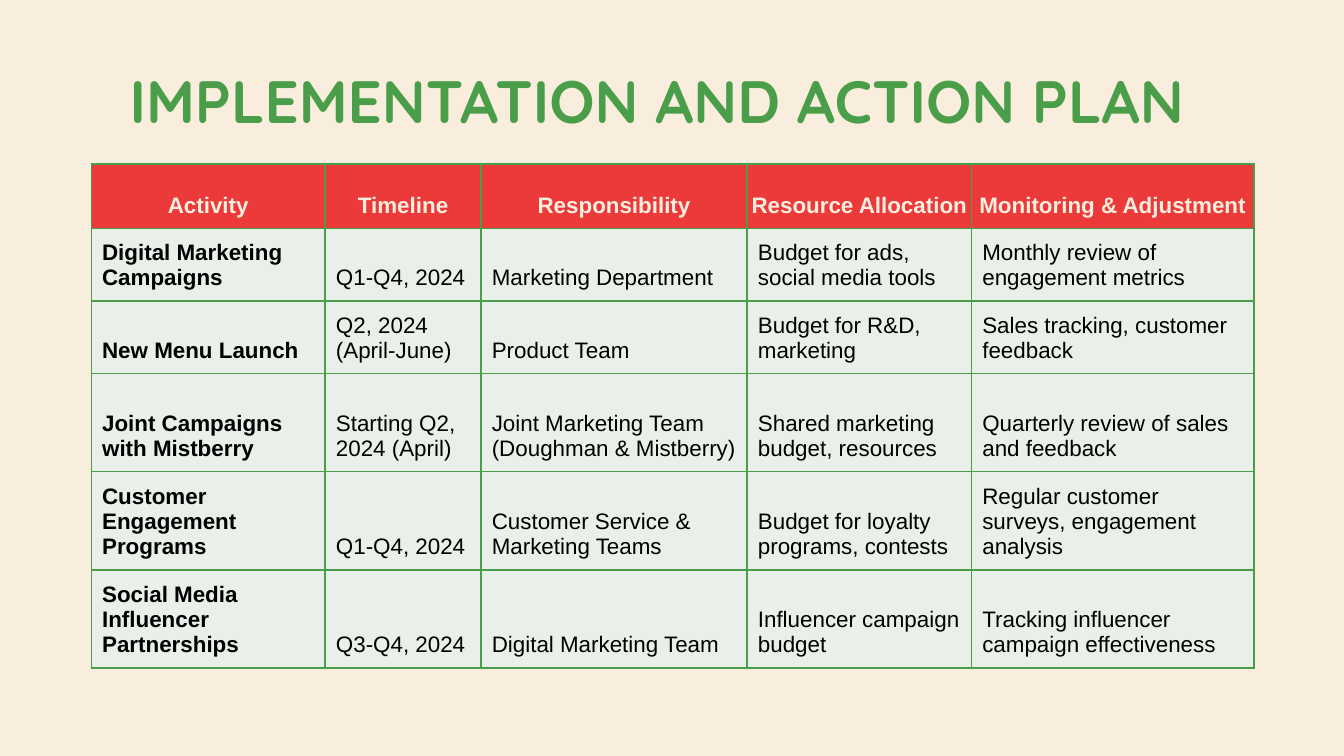
from lxml import etree
from pptx import Presentation
from pptx.dml.color import RGBColor
from pptx.enum.text import MSO_ANCHOR as Anchor, PP_ALIGN as Align
from pptx.oxml.ns import qn
from pptx.util import Inches, Pt

CREAM, GREEN, RED, MINT, BLACK = "F9EDDD", "4A9E4A", "EC3A3B", "E9F0E9", "000000"
SLIDE_WIDTH = 10
COLUMN_WIDTHS = [1.74, 1.16, 1.98, 1.67, 2.1]
ROW_HEIGHTS = [0.48, 0.54, 0.54, 0.73, 0.73, 0.73]
PLAN = [
    ["Activity", "Timeline", "Responsibility", "Resource Allocation",
     "Monitoring & Adjustment"],
    ["Digital Marketing Campaigns", "Q1-Q4, 2024", "Marketing Department",
     "Budget for ads, social media tools", "Monthly review of engagement metrics"],
    ["New Menu Launch", "Q2, 2024 (April-June)", "Product Team",
     "Budget for R&D, marketing", "Sales tracking, customer feedback"],
    ["Joint Campaigns with Mistberry", "Starting Q2, 2024 (April)",
     "Joint Marketing Team (Doughman & Mistberry)",
     "Shared marketing budget, resources", "Quarterly review of sales and feedback"],
    ["Customer Engagement Programs", "Q1-Q4, 2024",
     "Customer Service & Marketing Teams", "Budget for loyalty programs, contests",
     "Regular customer surveys, engagement analysis"],
    ["Social Media Influencer Partnerships", "Q3-Q4, 2024", "Digital Marketing Team",
     "Influencer campaign budget", "Tracking influencer campaign effectiveness"],
]


def rgb(value):
    """Return the colour for a hex string."""
    return RGBColor.from_string(value)


def add_run(p, text, font, size, color, bold):
    """Add one formatted run to a paragraph."""
    r = p.add_run()
    r.text = text
    r.font.name, r.font.size, r.font.bold = font, Pt(size), bold
    r.font.color.rgb = rgb(color)


def set_borders(cell, color, width):
    """Draw a solid line on all four sides of a cell."""
    tc_pr = cell._tc.get_or_add_tcPr()
    for side in ("a:lnL", "a:lnR", "a:lnT", "a:lnB"):
        ln = etree.SubElement(tc_pr, qn(side), w=str(Pt(width)))
        fill = etree.SubElement(ln, qn("a:solidFill"))
        etree.SubElement(fill, qn("a:srgbClr"), val=color)


def place_title(slide, left, top, width, height):
    """Move the title placeholder into its box and fill it."""
    sp = slide.shapes.title
    sp.left, sp.top = Inches(left), Inches(top)
    sp.width, sp.height = Inches(width), Inches(height)
    tf = sp.text_frame
    tf.margin_left = tf.margin_right = tf.margin_top = tf.margin_bottom = 0
    tf.word_wrap, tf.vertical_anchor = True, Anchor.MIDDLE
    p = tf.paragraphs[0]
    p.alignment = Align.CENTER
    add_run(p, "IMPLEMENTATION AND ACTION PLAN", "Quicksand", 32, GREEN, True)


def fill_cell(cell, text, is_header, is_activity):
    """Format one table cell as a header, an activity or a detail."""
    margin = Inches(0.02 if is_header else 0.08)
    cell.margin_left = cell.margin_right = cell.margin_top = margin
    cell.margin_bottom = Inches(0.08)
    cell.vertical_anchor = Anchor.BOTTOM
    set_borders(cell, GREEN, 1)
    cell.fill.solid()
    cell.fill.fore_color.rgb = rgb(RED if is_header else MINT)
    p = cell.text_frame.paragraphs[0]
    p.alignment = Align.CENTER if is_header else Align.LEFT
    add_run(p, text, "Arial", 12, CREAM if is_header else BLACK,
            is_header or is_activity)


def add_plan_table(slide, left, top, width, height):
    """Add the action plan table in the given box."""
    table = slide.shapes.add_table(
        len(PLAN), len(COLUMN_WIDTHS),
        Inches(left), Inches(top), Inches(width), Inches(height)).table
    table.horz_banding = False
    for column, column_width in zip(table.columns, COLUMN_WIDTHS):
        column.width = Inches(column_width)
    for row, row_height in zip(table.rows, ROW_HEIGHTS):
        row.height = Inches(row_height)
    for i, texts in enumerate(PLAN):
        for j, text in enumerate(texts):
            fill_cell(table.cell(i, j), text, i == 0, j == 0)


def main():
    """Build the slide and save it."""
    prs = Presentation()
    prs.slide_width = Inches(SLIDE_WIDTH)
    prs.slide_height = Inches(SLIDE_WIDTH * 9 / 16)
    slide = prs.slides.add_slide(prs.slide_layouts[5])
    slide.background.fill.solid()
    slide.background.fill.fore_color.rgb = rgb(CREAM)
    place_title(slide, 0.68, 0.43, 8.42, 0.63)
    add_plan_table(slide, 0.68, 1.22, sum(COLUMN_WIDTHS), sum(ROW_HEIGHTS))
    prs.save("out.pptx")


if __name__ == "__main__":
    main()
